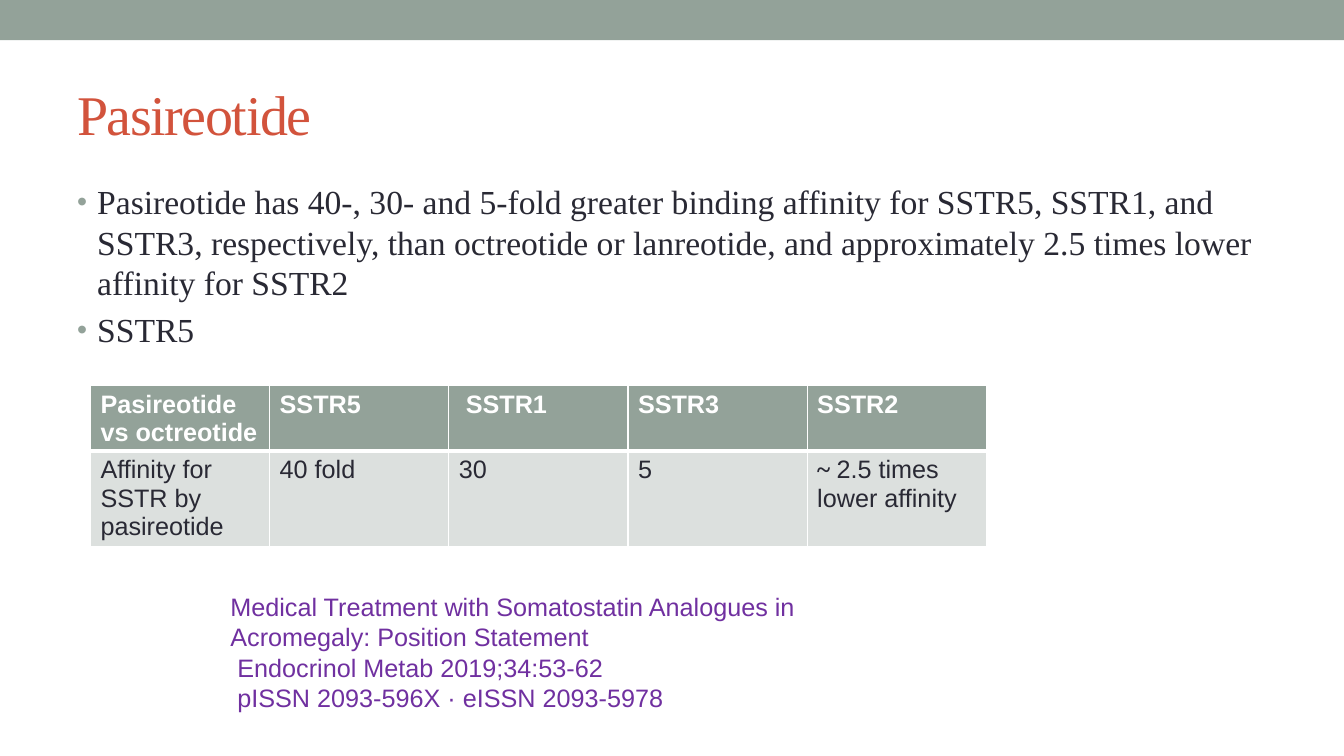
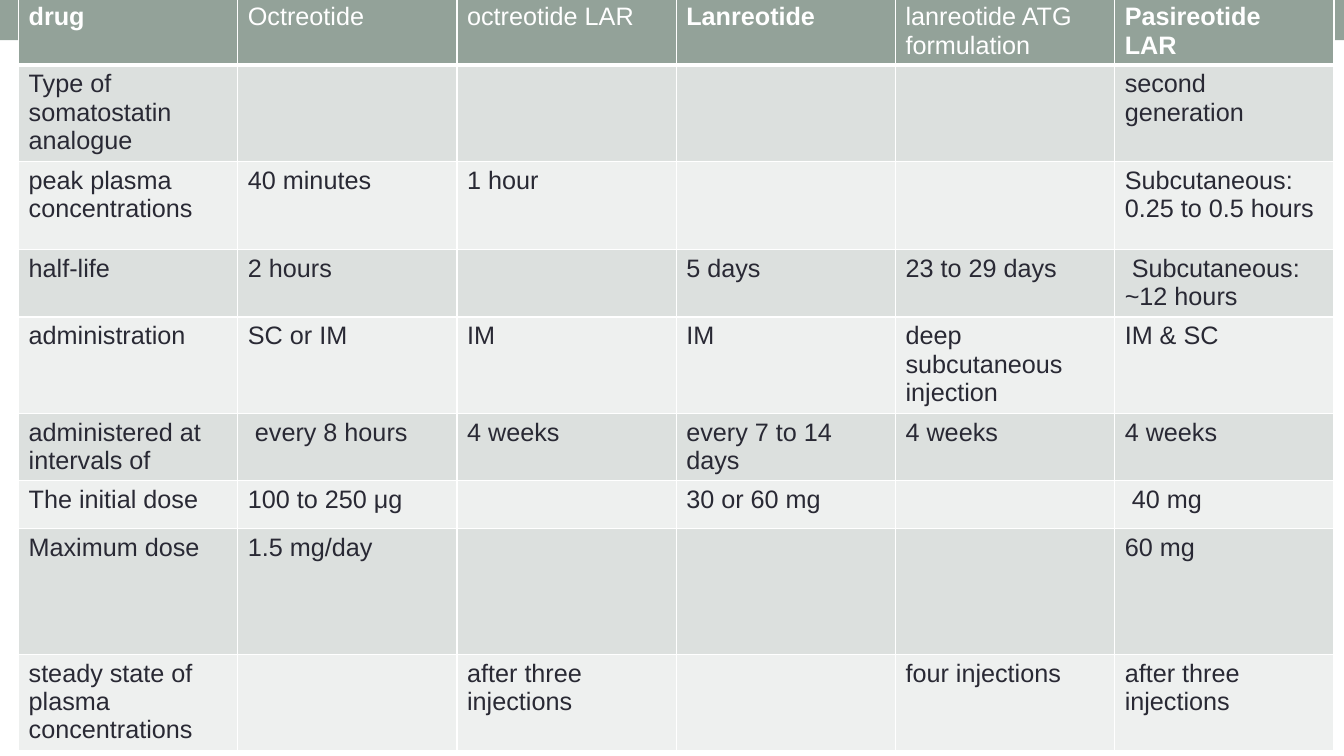
from lxml import etree
from pptx import Presentation
from pptx.dml.color import RGBColor
from pptx.enum.shapes import MSO_SHAPE
from pptx.enum.text import MSO_ANCHOR
from pptx.oxml.ns import qn
from pptx.util import Pt

RECTANGLE = MSO_SHAPE.RECTANGLE
MIDDLE = MSO_ANCHOR.MIDDLE
SANS, SERIF = "Arial", "Times New Roman"
SAGE, WHITE, INK, RUST, PURPLE = "93A299", "FFFFFF", "292934", "D2533C", "7030A0"
ROW_FILLS = ["EEF0EF", "DCE0DE"]
colour = RGBColor.from_string


def write(frame, text, size=18, font=SANS, color=INK, bold=False, spacing=0, bullet=False):
    for index, line in enumerate(text.split("\n")):
        para = frame.add_paragraph() if index else frame.paragraphs[-1]
        span = para.add_run()
        span.text = line
        span.font.size = Pt(size)
        span.font.name = font
        span.font.bold = bold
        span.font.color.rgb = colour(color)
        if spacing:
            span.font._element.set("spc", str(spacing * 100))
        if bullet:
            para.space_before = Pt(size * 0.2)
            props = para._p.get_or_add_pPr()
            props.set("marL", str(Pt(14.4)))
            props.set("indent", str(-Pt(14.4)))
            tint = etree.SubElement(props, qn("a:buClr"))
            etree.SubElement(tint, qn("a:srgbClr"), val=SAGE)
            etree.SubElement(props, qn("a:buSzPct"), val="85000")
            etree.SubElement(props, qn("a:buFont"), typeface=SANS)
            etree.SubElement(props, qn("a:buChar"), char="•")


def add_grid(page, left, top, column_width, heights, rows, bold_columns):
    count = len(rows[0])
    table = page.shapes.add_table(
        len(rows), count, Pt(left), Pt(top), Pt(column_width * count), Pt(sum(heights))
    ).table
    table.horz_banding = False
    for column in table.columns:
        column.width = Pt(column_width)
    for r, (height, texts) in enumerate(zip(heights, rows)):
        table.rows[r].height = Pt(height)
        header = r == 0
        for c, text in enumerate(texts):
            cell = table.cell(r, c)
            cell.margin_bottom = 0
            cell.fill.solid()
            cell.fill.fore_color.rgb = colour(SAGE if header else ROW_FILLS[r % 2])
            if text:
                write(cell.text_frame, text, color=WHITE if header else INK,
                      bold=header and c in bold_columns)
            for position, side in enumerate("LRTB"):
                width = 3 if header and side == "B" else 1
                border = etree.Element(qn(f"a:ln{side}"), w=str(Pt(width)))
                fill = etree.SubElement(border, qn("a:solidFill"))
                etree.SubElement(fill, qn("a:srgbClr"), val=WHITE)
                cell._tc.get_or_add_tcPr().insert(position, border)
    return table


deck = Presentation()
deck.slide_width, deck.slide_height = Pt(960), Pt(540)
pages = [deck.slides.add_slide(deck.slide_layouts[6]) for _ in range(2)]
for page in pages:
    band = page.shapes.add_shape(RECTANGLE, 0, 0, deck.slide_width, Pt(28.8))
    band.shadow.inherit = False
    band.fill.solid()
    band.fill.fore_color.rgb = colour(SAGE)
    band.line.fill.background()

affinity_page, drug_page = pages

text_boxes = [
    ((48, 42, 864, 78), "Pasireotide",
     {"size": 40, "font": SERIF, "color": RUST, "spacing": -1}),
    ((48, 126, 864, 384),
     "Pasireotide has 40-, 30- and 5-fold greater binding affinity for SSTR5, SSTR1, and "
     "SSTR3, respectively, than octreotide or lanreotide, and approximately 2.5 times lower "
     "affinity for SSTR2\nSSTR5",
     {"size": 24, "font": SERIF, "bullet": True}),
    ((157.5, 419, 480, 94.5),
     "Medical Treatment with Somatostatin Analogues in Acromegaly: Position Statement\n"
     " Endocrinol Metab 2019;34:53-62\n"
     " pISSN 2093-596X · eISSN 2093-5978",
     {"color": PURPLE}),
]
for place, text, style in text_boxes:
    box = affinity_page.shapes.add_textbox(*map(Pt, place))
    box.text_frame.word_wrap = True
    if text == "Pasireotide":
        box.text_frame.vertical_anchor = MIDDLE
    write(box.text_frame, text, **style)

affinity_rows = [
    ["Pasireotide vs octreotide", "SSTR5", " SSTR1", "SSTR3", "SSTR2"],
    ["Affinity for SSTR by pasireotide", "40 fold", "30", "5", ""],
]
affinity_table = add_grid(affinity_page, 64.6, 275.4, 128, [46, 68], affinity_rows, range(5))
lower_affinity = affinity_table.cell(1, 4).text_frame
write(lower_affinity, "~ ", font=SERIF, bold=True)
write(lower_affinity, "2.5 times lower affinity")

drug_rows = [
    ["drug", "Octreotide", "octreotide LAR", "Lanreotide", "lanreotide ATG formulation",
     "Pasireotide\nLAR"],
    ["Type of somatostatin analogue", "", "", "", "", "second generation"],
    ["peak plasma concentrations", "40 minutes", "1 hour", "", "",
     "Subcutaneous: 0.25 to 0.5 hours"],
    ["half-life", "2 hours", "", "5 days", "23 to 29 days", " Subcutaneous: ~12 hours"],
    ["administration", "SC or IM", "IM", "IM", "deep subcutaneous injection", "IM & SC"],
    ["administered at intervals of", " every 8 hours", "4 weeks", "every 7 to 14 days",
     "4 weeks", "4 weeks"],
    ["The initial dose", "100 to 250 μg", "", "30 or 60 mg", "", " 40 mg"],
    ["Maximum dose", "1.5 mg/day", "", "", "", "60 mg"],
    ["steady state of plasma concentrations", "", "after three injections", "",
     "four injections", "after three injections"],
]
drug_heights = [48, 69, 63, 48, 69, 48, 34, 90, 69]
add_grid(drug_page, 13.3, -1.5, 156.6, drug_heights, drug_rows, {0, 3, 5})

deck.save("out.pptx")
